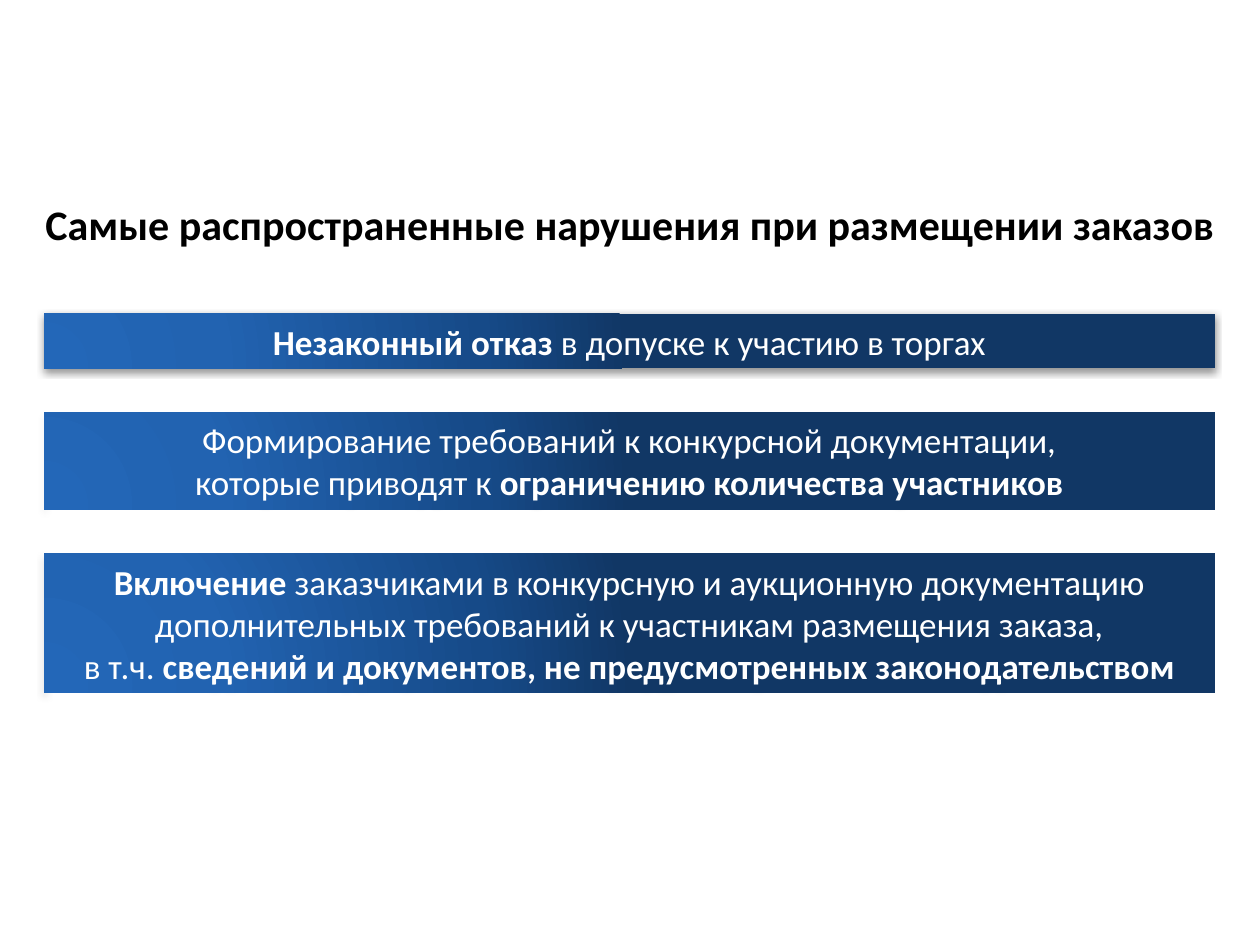
from typing import NamedTuple

from lxml.etree import SubElement
from pptx import Presentation
from pptx.dml.color import RGBColor
from pptx.enum.shapes import MSO_SHAPE
from pptx.enum.text import MSO_ANCHOR, MSO_AUTO_SIZE, PP_ALIGN
from pptx.oxml import parse_xml
from pptx.oxml.ns import nsdecls, qn
from pptx.shapes.autoshape import Shape
from pptx.slide import Slide
from pptx.util import Pt

FONT = "Calibri"
BAR_LEFT, BAR_WIDTH, FIRST_BAR_TOP = 25.2, 669, 179.2
LINE_HEIGHT, BAR_PADDING, BAR_GAP = 24.2, 7.2, 25
GRADIENT_STOPS = [(0, "2367B8"), (30, "2263B1"), (75, "164A88"), (100, "113765")]


class Span(NamedTuple):
    text: str
    bold: bool = False


class Violation(NamedTuple):
    line_count: int
    paragraphs: list[list[Span]]


TITLE = [[Span("Самые распространенные нарушения при размещении заказов", True)]]
VIOLATIONS = [
    Violation(1, [[Span("Незаконный отказ ", True), Span("в допуске к участию в торгах")]]),
    Violation(2, [
        [Span("Формирование требований к конкурсной документации,")],
        [Span("которые приводят к "), Span("ограничению количества участников", True)],
    ]),
    Violation(3, [
        [Span("Включение ", True),
         Span("заказчиками в конкурсную и аукционную документацию "
              "дополнительных требований к участникам размещения заказа,")],
        [Span("в т.ч. "),
         Span("сведений и документов, не предусмотренных законодательством", True)],
    ]),
]


def color(hex_code: str) -> RGBColor:
    return RGBColor.from_string(hex_code)


def write_text(box: Shape, paragraphs: list[list[Span]], size: float, hex_code: str) -> None:
    frame = box.text_frame
    frame.word_wrap = True
    frame.vertical_anchor = MSO_ANCHOR.MIDDLE
    for index, spans in enumerate(paragraphs):
        para = frame.add_paragraph() if index else frame.paragraphs[0]
        para.alignment = PP_ALIGN.CENTER
        para.font.name = FONT
        para.font.size = Pt(size)
        para.font.color.rgb = color(hex_code)
        for span in spans:
            run = para.add_run()
            run.text = span.text
            run.font.bold = span.bold


def set_radial_fill(shape: Shape) -> None:
    """Fill with a circular gradient that spreads from the lower left."""
    stops = "".join(
        f'<a:gs pos="{position * 1000}"><a:srgbClr val="{hex_code}"/></a:gs>'
        for position, hex_code in GRADIENT_STOPS
    )
    gradient = parse_xml(
        f'<a:gradFill {nsdecls("a")} rotWithShape="1"><a:gsLst>{stops}</a:gsLst>'
        '<a:path path="circle">'
        '<a:fillToRect l="5000" t="100000" r="120000" b="10000"/>'
        "</a:path></a:gradFill>"
    )
    shape.fill.background()
    properties = shape.element.spPr
    properties.replace(properties.find(qn("a:noFill")), gradient)


def set_drop_shadow(shape: Shape) -> None:
    shape.shadow.inherit = False
    effects = shape.element.spPr.find(qn("a:effectLst"))
    shadow = SubElement(
        effects, qn("a:outerShdw"), blurRad=str(Pt(4)), dist=str(Pt(1.6)),
        dir="5400000", algn="ctr", rotWithShape="0",
    )
    tint = SubElement(shadow, qn("a:srgbClr"), val="000000")
    SubElement(tint, qn("a:alpha"), val="42000")


def add_bar(slide: Slide, violation: Violation, top: float, height: float) -> None:
    bar = slide.shapes.add_shape(
        MSO_SHAPE.RECTANGLE, Pt(BAR_LEFT), Pt(top), Pt(BAR_WIDTH), Pt(height)
    )
    set_radial_fill(bar)
    bar.line.fill.background()
    set_drop_shadow(bar)
    write_text(bar, violation.paragraphs, 20, "FFFFFF")
    bar.text_frame.auto_size = MSO_AUTO_SIZE.SHAPE_TO_FIT_TEXT


def main() -> None:
    deck = Presentation()
    deck.slide_width, deck.slide_height = Pt(720), Pt(540)
    slide = deck.slides.add_slide(deck.slide_layouts[6])

    title = slide.shapes.add_textbox(Pt(0), Pt(82.8), Pt(720), Pt(90))
    write_text(title, TITLE, 24, "000000")

    top = FIRST_BAR_TOP
    for violation in VIOLATIONS:
        height = BAR_PADDING + LINE_HEIGHT * violation.line_count
        add_bar(slide, violation, top, height)
        top += height + BAR_GAP

    deck.save("out.pptx")


if __name__ == "__main__":
    main()
